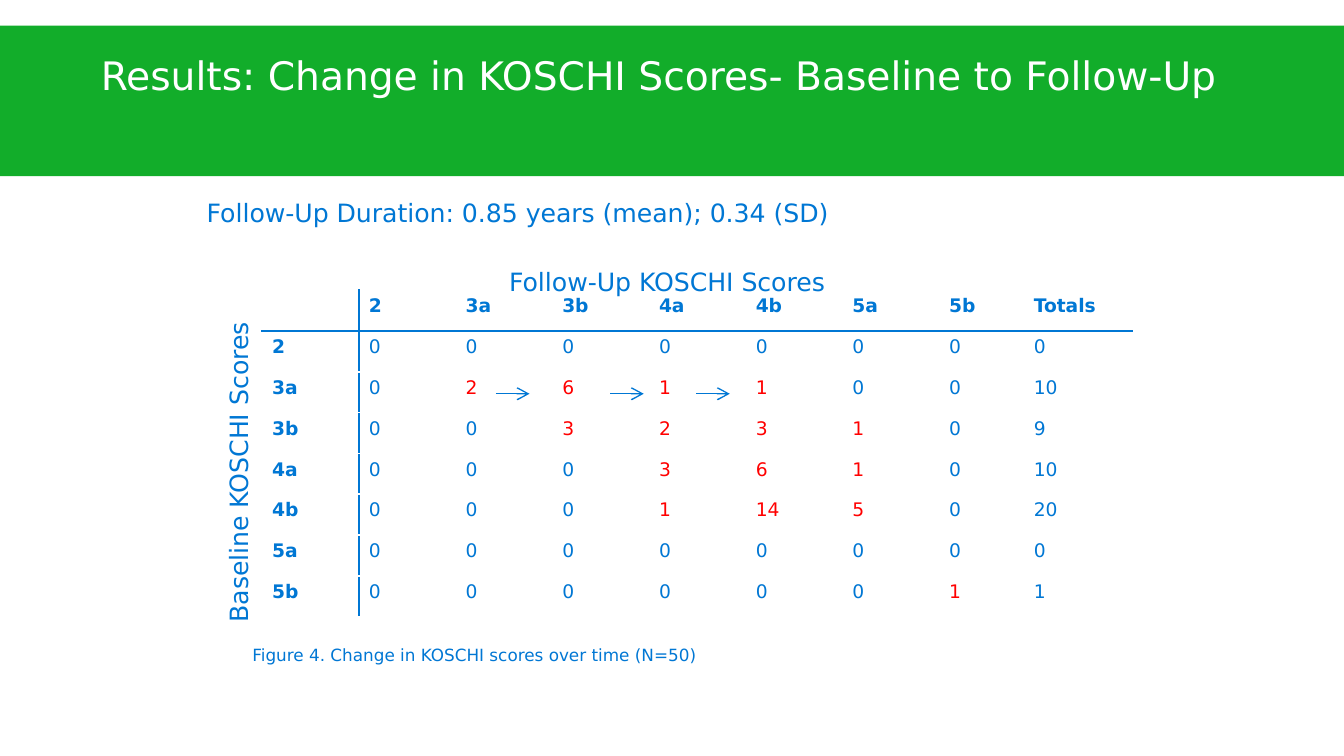
from lxml.etree import SubElement
from pptx import Presentation
from pptx.dml.color import RGBColor
from pptx.enum.shapes import MSO_CONNECTOR, MSO_SHAPE
from pptx.enum.text import MSO_ANCHOR, MSO_AUTO_SIZE, PP_ALIGN
from pptx.oxml import parse_xml
from pptx.oxml.ns import nsdecls, qn
from pptx.util import Inches, Pt

COLORS = {"band": "12AD2A", "ink": "0077D4", "change": "FF0000", "paper": "FFFFFF"}
FONT = "DejaVu Sans"
SLIDE_WIDTH = 10
SLIDE_HEIGHT = SLIDE_WIDTH * 9 / 16
LABEL_SIZE = 13.5
CELL_SIZE = 10
GRADES = ["2", "3a", "3b", "4a", "4b", "5a", "5b"]
COUNTS = [
    [0, 0, 0, 0, 0, 0, 0, 0],
    [0, 2, 6, 1, 1, 0, 0, 10],
    [0, 0, 3, 2, 3, 1, 0, 9],
    [0, 0, 0, 3, 6, 1, 0, 10],
    [0, 0, 0, 1, 14, 5, 0, 20],
    [0, 0, 0, 0, 0, 0, 0, 0],
    [0, 0, 0, 0, 0, 0, 1, 1],
]
COLUMN_WIDTHS = [0.72] * 7 + [0.63, 0.81]


def rgb(name):
    """Return the palette colour of the given name."""
    return RGBColor.from_string(COLORS[name])


def set_all(target, values):
    """Set every attribute in values on target."""
    for attribute, value in values.items():
        setattr(target, attribute, value)


def write(paragraph, text, size, color="ink", bold=False):
    """Add one formatted run to a paragraph."""
    run = paragraph.add_run()
    run.text = text
    set_all(run.font, {"name": FONT, "size": Pt(size), "bold": bold})
    run.font.color.rgb = rgb(color)


def add_heading(slide, left, top, width, height):
    """Place the coloured band and the slide title on it."""
    band = slide.shapes.add_shape(
        MSO_SHAPE.RECTANGLE, Inches(left), Inches(top), Inches(width), Inches(height))
    band.shadow.inherit = False
    band.fill.solid()
    band.fill.fore_color.rgb = rgb("band")
    band.line.fill.background()
    title = slide.shapes.title
    title.element.addprevious(band.element)
    set_all(title, {"left": Inches(left + 0.75), "top": Inches(top + 0.19),
                    "width": Inches(width - 1.5), "height": Inches(height - 0.18)})
    set_all(title.text_frame, {
        "margin_left": 0, "margin_top": 0, "margin_right": 0, "margin_bottom": 0,
        "vertical_anchor": MSO_ANCHOR.TOP, "word_wrap": True,
        "auto_size": MSO_AUTO_SIZE.NONE})
    paragraph = title.text_frame.paragraphs[0]
    paragraph.alignment = PP_ALIGN.LEFT
    write(paragraph, "Results: Change in KOSCHI Scores- Baseline to Follow-Up", 21, "paper")


def add_label(slide, text, left, top, width, height, size=LABEL_SIZE, rotation=0):
    """Place a line of text in its own box."""
    label = slide.shapes.add_textbox(
        Inches(left), Inches(top), Inches(width), Inches(height))
    label.rotation = rotation
    set_all(label.text_frame, {
        "word_wrap": True, "auto_size": MSO_AUTO_SIZE.SHAPE_TO_FIT_TEXT})
    write(label.text_frame.paragraphs[0], text, size)


def set_borders(cell, row, column):
    """Rule off the headings in ink and keep the other borders white."""
    inked = {"lnL": column == 1, "lnR": column == 0, "lnT": row == 1, "lnB": row == 0}
    for position, (side, is_ink) in enumerate(inked.items()):
        color = COLORS["ink" if is_ink else "paper"]
        cell._tc.get_or_add_tcPr().insert(position, parse_xml(
            f'<a:{side} {nsdecls("a")} w="{Pt(1)}"><a:solidFill>'
            f'<a:srgbClr val="{color}"/></a:solidFill></a:{side}>'))


def fill_cell(cell, text, row, column):
    """Format one cell of the score table."""
    set_all(cell, {"margin_left": Pt(5.4), "margin_right": Pt(5.4),
                   "margin_top": Inches(0.04), "margin_bottom": Inches(0.04)})
    cell.fill.solid()
    cell.fill.fore_color.rgb = rgb("paper")
    set_borders(cell, row, column)
    is_heading = row == 0 or column == 0
    is_total = column == len(GRADES) + 1
    is_change = not is_heading and not is_total and text != "0"
    paragraph = cell.text_frame.paragraphs[0]
    if text:
        write(paragraph, text, CELL_SIZE, "change" if is_change else "ink", is_heading)
    else:
        SubElement(paragraph._p, qn("a:endParaRPr"), sz=str(CELL_SIZE * 100))


def add_scores(slide, left, top, width, height):
    """Place the table of baseline against follow-up scores."""
    rows = [["", *GRADES, "Totals"]]
    rows += [[grade, *map(str, counts)] for grade, counts in zip(GRADES, COUNTS)]
    scores = slide.shapes.add_table(
        len(rows), len(rows[0]), Inches(left), Inches(top),
        Inches(width), Inches(height)).table
    set_all(scores, {"first_row": False, "horz_banding": False})
    for column, column_width in zip(scores.columns, COLUMN_WIDTHS):
        column.width = Inches(column_width)
    for row, texts in enumerate(rows):
        for column, text in enumerate(texts):
            fill_cell(scores.cell(row, column), text, row, column)


def add_arrow(slide, left, top, width):
    """Draw a horizontal arrow pointing right."""
    arrow = slide.shapes.add_connector(
        MSO_CONNECTOR.STRAIGHT, Inches(left), Inches(top), Inches(left + width), Inches(top))
    arrow.line.color.rgb = rgb("ink")
    arrow.line.width = Pt(0.75)
    SubElement(arrow.line._get_or_add_ln(), qn("a:tailEnd"), type="arrow")
    SubElement(arrow.element.spPr, qn("a:effectLst"))


def add_figure(slide, left, top, width, height):
    """Place the score table with its axis labels, caption and arrows."""
    add_scores(slide, left, top, width, height)
    add_label(slide, "Follow-Up KOSCHI Scores", left + 1.74, top - 0.23, 3.38, 0.33)
    add_label(slide, "Baseline KOSCHI Scores", left - 1.5, top + 1.08, 2.65, 0.33,
              rotation=270)
    add_label(slide, "Figure 4. Change in KOSCHI scores over time (N=50)",
              left - 0.17, top + height + 0.16, 3.79, 0.25, size=9)
    for offset in (1.74, 2.59, 3.23):
        add_arrow(slide, left + offset, top + 0.77, 0.25)


def main():
    """Build and save the results slide."""
    presentation = Presentation()
    set_all(presentation, {"slide_width": Inches(SLIDE_WIDTH),
                           "slide_height": Inches(SLIDE_HEIGHT)})
    slide = presentation.slides.add_slide(presentation.slide_layouts[5])
    add_heading(slide, 0, 0.19, SLIDE_WIDTH, 1.12)
    add_figure(slide, 1.95, 2.16, 6.49, 2.43)
    add_label(slide, "Follow-Up Duration: 0.85 years (mean); 0.34 (SD)",
              1.44, 1.42, 5.5, 0.33)
    presentation.save("out.pptx")


if __name__ == "__main__":
    main()
